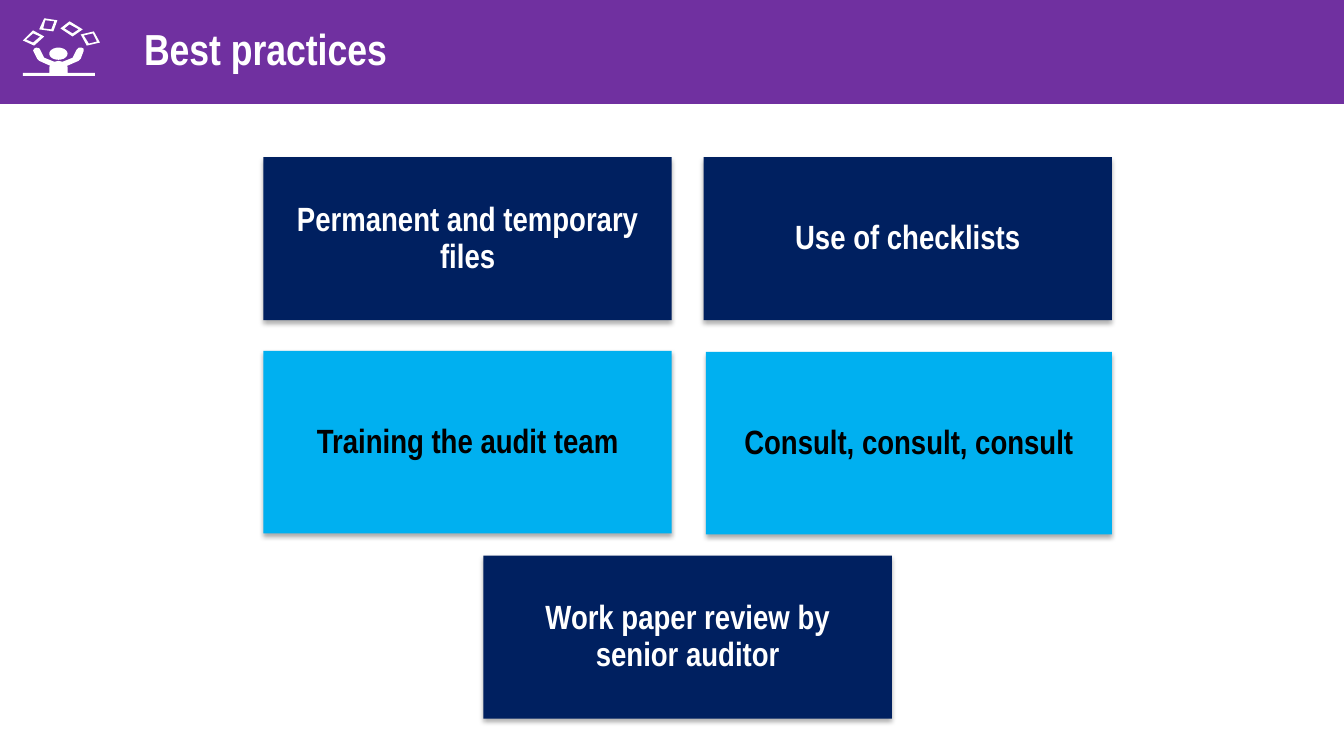
from dataclasses import dataclass
from math import cos, pi, sin

from lxml import etree
from pptx import Presentation
from pptx.dml.color import RGBColor
from pptx.enum.shapes import MSO_SHAPE
from pptx.enum.text import MSO_ANCHOR, PP_ALIGN
from pptx.oxml.ns import qn
from pptx.util import Cm, Pt

RECT = MSO_SHAPE.RECTANGLE
MIDDLE = MSO_ANCHOR.MIDDLE
LEFT, CENTER = PP_ALIGN.LEFT, PP_ALIGN.CENTER


@dataclass(frozen=True)
class Theme:
    font: str = "Arial Narrow"
    title: int = 31
    body: int = 24
    purple: str = "7030A0"
    navy: str = "002060"
    sky: str = "00B0F0"
    white: str = "FFFFFF"
    black: str = "000000"


THEME = Theme()

SHEETS = [
    [[(10, 12), (21, 18), (11, 27), (0, 22)],
     [(10, 15), (3, 21), (10, 24), (17, 18)]],
    [[(46, 3), (37, 10), (49, 18), (59, 11)],
     [(46, 6), (55, 11), (49, 15), (41, 10)]],
    [[(34, 2), (21, 0), (16, 11), (30, 13)],
     [(31, 3), (28, 11), (20, 10), (22, 2)]],
    [[(70, 13), (76, 24), (63, 27), (57, 16)],
     [(69, 15), (60, 17), (65, 25), (73, 23)]],
]
HEAD = [(35 + 9 * cos(k * pi / 16), 35 + 6 * sin(k * pi / 16))
        for k in range(32)]
BODY = [
    (35, 42), (31, 43), (21, 39), (17, 31), (16, 29.5), (13, 29), (11, 30),
    (10, 32), (14, 40), (16, 42), (27, 47), (26, 48), (26, 54), (0, 54),
    (0, 57), (71, 57), (71, 54), (44, 54), (44, 48), (43.5, 47), (55, 42),
    (57, 40), (60, 32), (60, 30), (58, 29), (55, 29), (53, 31), (49, 39),
    (39, 43),
]


def paint(shape, color):
    shape.shadow.inherit = False
    shape.fill.solid()
    shape.fill.fore_color.rgb = RGBColor.from_string(color)
    shape.line.fill.background()


def write(shape, text, size, color, align):
    frame = shape.text_frame
    frame.word_wrap = True
    frame.vertical_anchor = MIDDLE
    para = frame.paragraphs[0]
    para.alignment = align
    run = para.add_run()
    run.text = text
    run.font.name = THEME.font
    run.font.size = Pt(size)
    run.font.bold = True
    run.font.color.rgb = RGBColor.from_string(color)
    return para


def add_shade(shape):
    effects = shape._element.spPr.find(qn("a:effectLst"))
    shade = etree.SubElement(
        effects, qn("a:outerShdw"), blurRad=str(Pt(3.5)),
        dist=str(Pt(2.2)), dir="5400000", rotWithShape="0")
    tint = etree.SubElement(shade, qn("a:srgbClr"), val=THEME.black)
    etree.SubElement(tint, qn("a:alpha"), val="32000")


def add_icon(slide, left, top, width):
    parts = [ring for sheet in SHEETS for ring in sheet] + [HEAD, BODY]
    rings = [[(x * 10, y * 10) for x, y in ring] for ring in parts]
    pen = slide.shapes.build_freeform(*rings[0][0], scale=Cm(width) / 760)
    pen.add_line_segments(rings[0][1:])
    for ring in rings[1:]:
        pen.move_to(*ring[0])
        pen.add_line_segments(ring[1:])
    paint(pen.convert_to_shape(Cm(left), Cm(top)), THEME.white)


def add_header(slide, left, top, width, height):
    band = slide.shapes.add_shape(
        RECT, Cm(left), Cm(top), Cm(width), Cm(height))
    paint(band, THEME.purple)
    band.line.color.rgb = RGBColor.from_string(THEME.white)
    band.line.width = Pt(0.5)
    band.text_frame.margin_left = Cm(3.73)
    write(band, "Best practices", THEME.title, THEME.white, LEFT)
    add_icon(slide, left + 0.68, top + 0.66, 1.94)


def add_card(slide, text, left, top, width, height, fill, ink):
    card = slide.shapes.add_shape(
        RECT, Cm(left), Cm(top), Cm(width), Cm(height))
    paint(card, fill)
    add_shade(card)
    frame = card.text_frame
    frame.margin_left = frame.margin_right = Cm(0.5)
    frame.margin_top = frame.margin_bottom = Cm(0.5)
    write(card, text, THEME.body, ink, CENTER).line_spacing = 0.92


def add_cards(slide, left, top, width):
    wide, low, tall = 10.29, 4.11, 4.6
    right = left + width - wide
    mid = left + (width - wide) / 2
    second, third = top + 4.88, top + 10.04
    dark = THEME.navy, THEME.white
    light = THEME.sky, THEME.black
    cards = [
        ("Permanent and temporary files", left, top, wide, low, *dark),
        ("Use of checklists", right, top, wide, low, *dark),
        ("Training the audit team", left, second, wide, tall, *light),
        ("Work paper review by senior auditor", mid, third, wide, low, *dark),
        ("Consult, consult, consult", right + 0.06, second + 0.03,
         wide - 0.06, tall, *light),
    ]
    for card in cards:
        add_card(slide, *card)


def main():
    deck = Presentation()
    deck.slide_width, deck.slide_height = Cm(33.87), Cm(19.05)
    slide = deck.slides.add_slide(deck.slide_layouts[6])
    add_header(slide, -0.1, -0.2, 33.97, 2.82)
    add_cards(slide, 6.64, 3.96, 21.38)
    deck.save("out.pptx")


if __name__ == "__main__":
    main()
